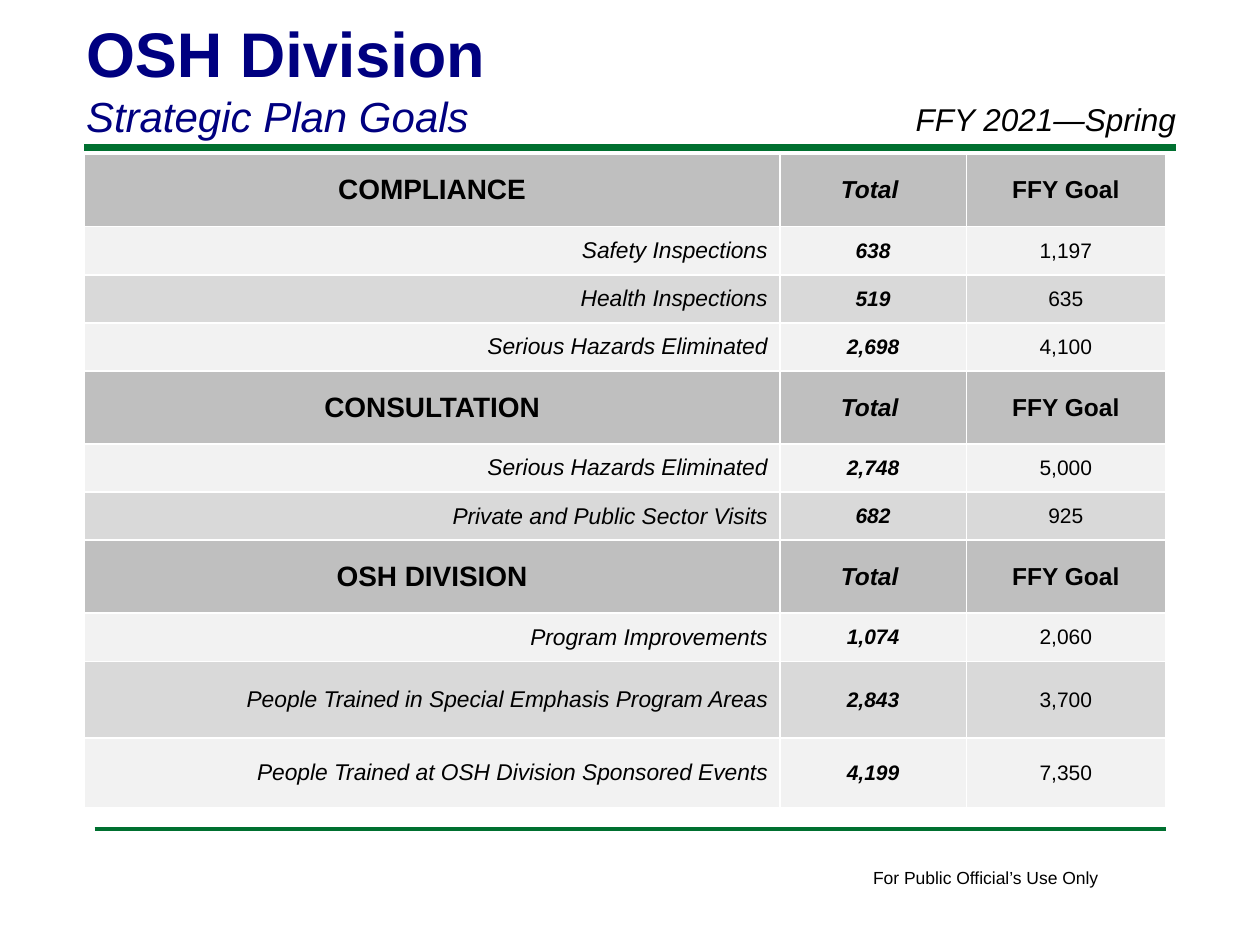
from dataclasses import dataclass

from lxml import etree
from pptx import Presentation
from pptx.dml.color import RGBColor
from pptx.enum.shapes import MSO_CONNECTOR
from pptx.enum.text import MSO_ANCHOR, MSO_AUTO_SIZE, PP_ALIGN
from pptx.oxml.ns import qn
from pptx.util import Cm, Pt

STRAIGHT = MSO_CONNECTOR.STRAIGHT
LEFT, CENTER, RIGHT = PP_ALIGN.LEFT, PP_ALIGN.CENTER, PP_ALIGN.RIGHT
MIDDLE, BOTTOM = MSO_ANCHOR.MIDDLE, MSO_ANCHOR.BOTTOM
NO_AUTOFIT = MSO_AUTO_SIZE.NONE
TITLE_ONLY = 5


@dataclass(frozen=True)
class Theme:
    """Colours, font and type sizes of the slide."""
    font: str = "Arial"
    ink: str = "000000"
    navy: str = "000080"
    green: str = "007030"
    border: str = "FFFFFF"
    section: str = "BFBFBF"
    bands: tuple = ("F2F2F2", "D9D9D9")
    title: int = 36
    subtitle: int = 24
    period: int = 18
    section_name: int = 16
    heading: int = 14
    goal: int = 13
    figure: int = 12
    footer: int = 10


THEME = Theme()

SECTION_HEIGHT, GOAL_HEIGHT = 1.47, 0.97
COLUMN_WIDTHS = (14.02, 3.76, 4.01)
SECTIONS = (
    ("COMPLIANCE", (
        ("Safety Inspections", "638", "1,197", GOAL_HEIGHT),
        ("Health Inspections", "519", "635", GOAL_HEIGHT),
        ("Serious Hazards Eliminated", "2,698", "4,100", GOAL_HEIGHT),
    )),
    ("CONSULTATION", (
        ("Serious Hazards Eliminated", "2,748", "5,000", GOAL_HEIGHT),
        ("Private and Public Sector Visits", "682", "925", GOAL_HEIGHT),
    )),
    ("OSH DIVISION", (
        ("Program Improvements", "1,074", "2,060", GOAL_HEIGHT),
        ("People Trained in Special Emphasis Program Areas", "2,843", "3,700", 1.55),
        ("People Trained at OSH Division Sponsored Events", "4,199", "7,350", 1.4),
    )),
)


def write(paragraph, text, size, color=THEME.ink, bold=False, italic=False, align=LEFT):
    """Fill a paragraph with text in one style."""
    paragraph.text = text
    paragraph.alignment = align
    paragraph.space_before = Pt(0)
    font = paragraph.font
    font.name, font.size = THEME.font, Pt(size)
    font.bold, font.italic = bold, italic
    font.color.rgb = RGBColor.from_string(color)


def add_rule(slide, left, top, width, weight):
    """Draw a horizontal green rule."""
    rule = slide.shapes.add_connector(
        STRAIGHT, Cm(left), Cm(top), Cm(left + width), Cm(top))
    rule.line.color.rgb = RGBColor.from_string(THEME.green)
    rule.line.width = Pt(weight)
    etree.SubElement(rule._element.spPr, qn("a:effectLst"))


def add_label(slide, left, top, width, height, text, size, italic=False, wrap=True):
    """Add a one-line text box."""
    label = slide.shapes.add_textbox(Cm(left), Cm(top), Cm(width), Cm(height))
    label.text_frame.word_wrap = wrap
    write(label.text_frame.paragraphs[0], text, size, italic=italic)


def add_header(slide, left, top, width, height):
    """Place the title, reporting period and heavy rule."""
    title = slide.shapes.title
    title.left, title.top = Cm(left), Cm(top)
    title.width, title.height = Cm(width), Cm(height)
    frame = title.text_frame
    frame.auto_size = NO_AUTOFIT
    frame.word_wrap = True
    frame.vertical_anchor = BOTTOM
    write(frame.paragraphs[0], "OSH Division", THEME.title, THEME.navy, bold=True)
    write(frame.add_paragraph(), "Strategic Plan Goals", THEME.subtitle,
          THEME.navy, italic=True)
    add_label(slide, left + 16.73, top + 1.75, 6.35, 1.02, "FFY 2021—Spring",
              THEME.period, italic=True)
    add_rule(slide, left + 0.22, top + height, 22, 4)


def style_cell(cell, fill):
    """Give a cell white borders, a fill and middle anchoring."""
    properties = cell._tc.get_or_add_tcPr()
    for side in ("a:lnL", "a:lnR", "a:lnT", "a:lnB"):
        line = etree.SubElement(properties, qn(side), w=str(Pt(1)))
        solid = etree.SubElement(line, qn("a:solidFill"))
        etree.SubElement(solid, qn("a:srgbClr"), val=THEME.border)
    cell.fill.solid()
    cell.fill.fore_color.rgb = RGBColor.from_string(fill)
    cell.vertical_anchor = MIDDLE


def fill_row(table, index, height, fill, entries):
    """Write one table row from (text, style) entries."""
    table.rows[index].height = Cm(height)
    for cell, (text, style) in zip(table.rows[index].cells, entries):
        style_cell(cell, fill)
        write(cell.text_frame.paragraphs[0], text, **style)


def add_goals(slide, left, top, width, height):
    """Add the table of goals, one heading row per section."""
    section_style = dict(size=THEME.section_name, bold=True, align=CENTER)
    heading_style = dict(size=THEME.heading, bold=True, align=CENTER)
    goal_style = dict(size=THEME.goal, italic=True, align=RIGHT)
    figure_style = dict(size=THEME.figure, align=CENTER)
    row_count = sum(1 + len(goals) for _, goals in SECTIONS)
    table = slide.shapes.add_table(
        row_count, len(COLUMN_WIDTHS), Cm(left), Cm(top), Cm(width), Cm(height)).table
    table.first_row = table.horz_banding = False
    for column, column_width in zip(table.columns, COLUMN_WIDTHS):
        column.width = Cm(column_width)
    row = 0
    for section, goals in SECTIONS:
        fill_row(table, row, SECTION_HEIGHT, THEME.section, (
            (section, section_style),
            ("Total ", heading_style | dict(italic=True)),
            ("FFY Goal", heading_style)))
        row += 1
        for position, (goal, total, target, goal_height) in enumerate(goals):
            fill_row(table, row, goal_height, THEME.bands[position % 2], (
                (goal, goal_style),
                (total, figure_style | dict(bold=True, italic=True)),
                (target, figure_style)))
            row += 1


def add_footer(slide, left, top, width):
    """Place the thin rule and the use notice below it."""
    add_rule(slide, left, top, width, 2)
    add_label(slide, left + 15.44, top + 0.64, 5.1, 0.68,
              "For Public Official’s Use Only", THEME.footer, wrap=False)


def main():
    """Build and save the slide."""
    deck = Presentation()
    deck.slide_width, deck.slide_height = Cm(25.4), Cm(19.05)
    slide = deck.slides.add_slide(deck.slide_layouts[TITLE_ONLY])
    add_header(slide, 1.48, 0.15, 20.96, 2.82)
    add_goals(slide, 1.7, 3.1, sum(COLUMN_WIDTHS), 13.18)
    add_footer(slide, 1.91, 16.71, 21.59)
    deck.save("out.pptx")


if __name__ == "__main__":
    main()
